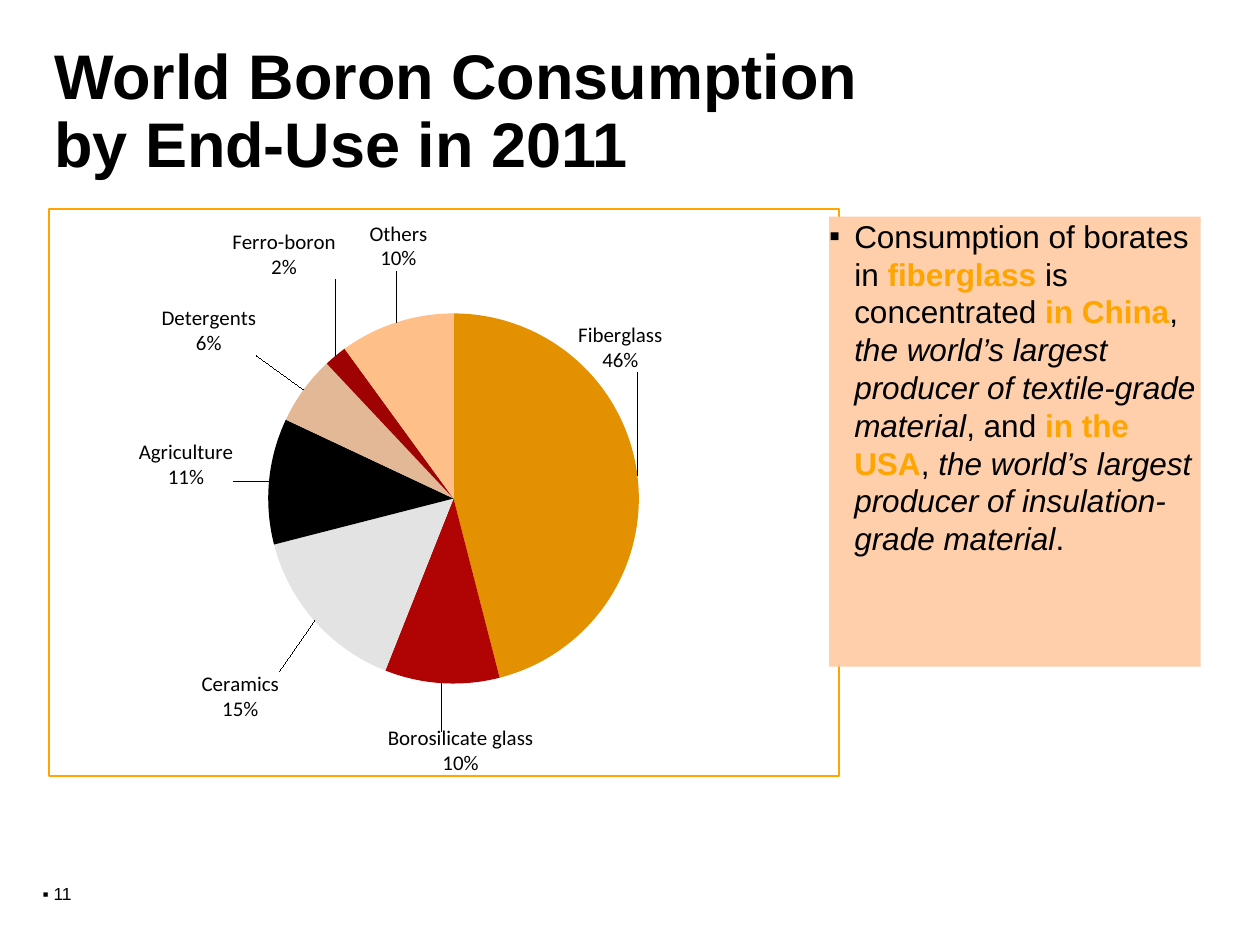
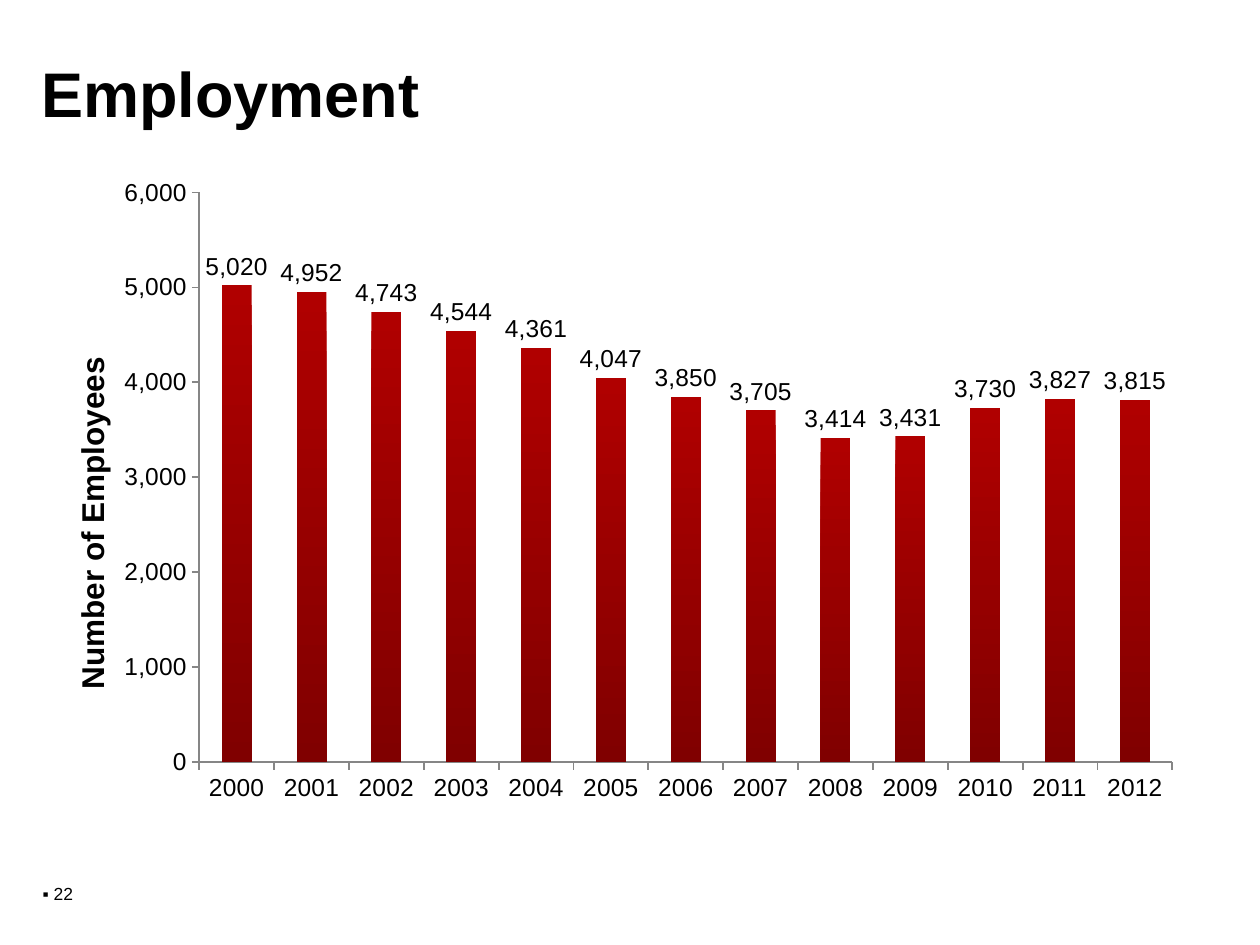
"""Build two slides on boron: consumption by end-use and employment."""
from itertools import accumulate
from math import cos, pi, sin

from pptx import Presentation, util as u
from pptx.chart.data import CategoryChartData
from pptx.dml.color import RGBColor
from pptx.enum import chart as charts, text
from pptx.oxml import parse_xml
from pptx.oxml.ns import nsdecls, qn

BLACK = RGBColor(0, 0, 0)
ORANGE = RGBColor(0xFE, 0xA5, 0x01)
PEACH = RGBColor(0xFE, 0xCF, 0xAA)
AMBER = RGBColor(0xE3, 0x91, 0x00)
RED = RGBColor(0xB0, 0x03, 0x03)
SILVER = RGBColor(0xE3, 0xE3, 0xE3)
TAN = RGBColor(0xE3, 0xB8, 0x96)
DARK_RED = RGBColor(0x9E, 0x02, 0x02)
APRICOT = RGBColor(0xFE, 0xBF, 0x88)
BAR_TOP = RGBColor(0xB0, 0x00, 0x00)
BAR_FOOT = RGBColor(0x80, 0x00, 0x00)
GREY = RGBColor(0x86, 0x86, 0x86)

WIDTH, HEIGHT = 10, 7.5
NUMBER_BOX = (0.24, 6.96, 1.47, 0.27)

CONSUMPTION = {
    "title": "World Boron Consumption\vby End-Use in 2011",
    "title_box": (0.43, 0.31, 9.06, 1.16),
    "number": 11,
    "chart_box": (0.38, 1.65, 6.29, 4.52),
    "plot": (0.168, 0.184, 0.688, 0.653),
    "body_box": (6.58, 1.72, 2.95, 3.57),
}
LABEL_HEIGHT = 0.4
END_USES = [
    ("Fiberglass", 46, AMBER, 0.67, (4.87, 2.76)),
    ("Borosilicate glass", 10, RED, 1.15, (3.66, 5.96)),
    ("Ceramics", 15, SILVER, 0.61, (1.95, 5.5)),
    ("Agriculture", 11, BLACK, 0.75, (1.53, 3.69)),
    ("Detergents", 6, TAN, 0.75, (1.7, 2.65)),
    ("Ferro-boron", 2, DARK_RED, 0.82, (2.29, 2.06)),
    ("Others", 10, APRICOT, 0.46, (3.18, 2)),
]
PLAIN = {"color": BLACK}
KEY = {"color": ORANGE, "bold": True}
ASIDE = {"color": BLACK, "italic": True}
REMARK = [
    ("Consumption of borates in ", PLAIN),
    ("fiberglass ", KEY),
    ("is concentrated ", PLAIN),
    ("in China", KEY),
    (", ", PLAIN),
    ("the world’s largest producer of textile-grade material", ASIDE),
    (", and ", PLAIN),
    ("in the USA", KEY),
    (", ", PLAIN),
    ("the world’s largest producer of insulation-grade material", ASIDE),
    (".", PLAIN),
]

EMPLOYMENT = {
    "title": "Employment",
    "title_box": (0.33, 0.45, 9.32, 0.71),
    "number": 22,
    "chart_box": (0.43, 1.33, 9.14, 5.21),
    "plot": (0.126, 0.038, 0.845, 0.868),
    "axis_title": "Number of Employees",
    "axis_title_at": (0.01, 0.28),
}
FIRST_YEAR = 2000
EMPLOYEES = [5020, 4952, 4743, 4544, 4361, 4047, 3850,
             3705, 3414, 3431, 3730, 3827, 3815]


def apply(target, **values):
    for name, value in values.items():
        setattr(target, name, value)


def style(font, size, color=BLACK, name="Arial", **values):
    apply(font, size=u.Pt(size), name=name, **values)
    font.color.rgb = color


def place(shape, box):
    for name, value in zip(("left", "top", "width", "height"), box):
        setattr(shape, name, u.Inches(value))


def layout_xml(modes, **values):
    parts = "".join(f'<c:{mode} val="{kind}"/>' for mode, kind in modes.items())
    parts += "".join(f'<c:{name} val="{value:.4f}"/>' for name, value in values.items())
    return parse_xml(f'<c:layout {nsdecls("c")}><c:manualLayout>{parts}'
                     '</c:manualLayout></c:layout>')


def start_slide(deck, layout, content):
    slide = deck.slides.add_slide(deck.slide_layouts[layout])
    title = slide.shapes.title
    place(title, content["title_box"])
    frame = title.text_frame
    frame.text = content["title"]
    apply(frame, margin_left=0, margin_right=0, word_wrap=True,
          auto_size=text.MSO_AUTO_SIZE.NONE, vertical_anchor=text.MSO_ANCHOR.TOP)
    heading = frame.paragraphs[0]
    apply(heading, alignment=text.PP_ALIGN.LEFT, line_spacing=0.9)
    for run in heading.runs:
        style(run.font, 36, bold=True)

    number = slide.shapes.add_textbox(*map(u.Inches, NUMBER_BOX)).text_frame
    apply(number, word_wrap=True, vertical_anchor=text.MSO_ANCHOR.MIDDLE)
    run = number.paragraphs[0].add_run()
    run.text = f"▪ {content['number']}"
    style(run.font, 10)
    return slide


def add_chart(slide, content, kind, categories, values, size, font):
    data = CategoryChartData()
    data.categories = categories
    data.add_series("Series 1", values)
    frame = slide.shapes.add_chart(kind, *map(u.Inches, content["chart_box"]), data)
    slide.shapes._spTree.insert(2, frame._element)
    chart = frame.chart
    apply(chart, has_title=False, has_legend=False)
    style(chart.font, size, name=font)
    area = chart._chartSpace.chart.plotArea
    for old in area.findall(qn("c:layout")):
        area.remove(old)
    modes = {"layoutTarget": "inner", "xMode": "edge", "yMode": "edge"}
    area.insert(0, layout_xml(modes, **dict(zip("xywh", content["plot"]))))
    return chart


def label_offset(share, width, target):
    left, top, chart_width, chart_height = CONSUMPTION["chart_box"]
    x, y, w, h = CONSUMPTION["plot"]
    radius = min(w * chart_width, h * chart_height) / 2
    across, up = sin(2 * pi * share), cos(2 * pi * share)
    side = 0 if abs(across) < sin(pi / 36) else (1 if across > 0 else -1)
    rise = 0 if abs(up) < sin(pi / 36) else (1 if up > 0 else -1)
    start_x = left + (x + w / 2) * chart_width + radius * across + side * width / 2
    start_y = top + (y + h / 2) * chart_height - radius * up - rise * LABEL_HEIGHT / 2
    return (target[0] - start_x) / chart_width, (target[1] - start_y) / chart_height


def show_share_and_name(labels):
    for flag, shown in (("showVal", 0), ("showCatName", 1), ("showPercent", 1)):
        labels.find(qn(f"c:{flag}")).set("val", str(shown))
    separator = parse_xml(f'<c:separator {nsdecls("c")}>\n</c:separator>')
    labels.find(qn("c:showBubbleSize")).addnext(separator)


def add_consumption(deck):
    slide = start_slide(deck, 1, CONSUMPTION)
    names, shares, colors, widths, targets = zip(*END_USES)
    chart = add_chart(slide, CONSUMPTION, charts.XL_CHART_TYPE.PIE,
                      names, shares, 12, "Calibri")
    border = parse_xml(
        f'<c:spPr {nsdecls("c", "a")}><a:noFill/><a:ln w="{u.Pt(1.5)}"><a:solidFill>'
        f'<a:srgbClr val="{ORANGE}"/></a:solidFill></a:ln></c:spPr>')
    chart._chartSpace.find(qn("c:txPr")).addprevious(border)

    series = chart.plots[0].series[0]
    style(series.data_labels.font, 12, name="Calibri")
    ends = accumulate(shares)
    for i, (end, share, color, width, target) in enumerate(
            zip(ends, shares, colors, widths, targets)):
        point = series.points[i]
        point.format.fill.solid()
        point.format.fill.fore_color.rgb = color
        point.data_label.position = charts.XL_LABEL_POSITION.OUTSIDE_END
        x, y = label_offset((end - share / 2) / sum(shares), width, target)
        label = series._element.findall(".//" + qn("c:dLbl"))[i]
        label.find(qn("c:idx")).addnext(layout_xml({}, x=x, y=y))
        show_share_and_name(label)
    show_share_and_name(series._element.find(qn("c:dLbls")))

    body = slide.placeholders[1]
    place(body, CONSUMPTION["body_box"])
    body.fill.solid()
    body.fill.fore_color.rgb = PEACH
    frame = body.text_frame
    apply(frame, margin_left=0, margin_right=0, margin_top=0, margin_bottom=0,
          word_wrap=True, auto_size=text.MSO_AUTO_SIZE.NONE,
          vertical_anchor=text.MSO_ANCHOR.TOP)
    remark = frame.paragraphs[0]
    remark.space_before = u.Pt(0)
    props = remark._p.get_or_add_pPr()
    props.set("marL", str(u.Inches(0.2)))
    props.set("indent", str(u.Inches(-0.2)))
    for bullet in ('buFont {} typeface="Arial"', 'buChar {} char="▪"'):
        props.append(parse_xml(f"<a:{bullet.format(nsdecls('a'))}/>"))
    for words, look in REMARK:
        run = remark.add_run()
        run.text = words
        style(run.font, 18, **look)


def add_employment(deck):
    slide = start_slide(deck, 5, EMPLOYMENT)
    years = [str(FIRST_YEAR + i) for i in range(len(EMPLOYEES))]
    chart = add_chart(slide, EMPLOYMENT, charts.XL_CHART_TYPE.COLUMN_CLUSTERED,
                      years, EMPLOYEES, 18, "Arial")
    plot = chart.plots[0]
    apply(plot, gap_width=150, vary_by_categories=False, has_data_labels=True)
    apply(plot.data_labels, show_value=True, number_format="#,##0",
          number_format_is_linked=False,
          position=charts.XL_LABEL_POSITION.OUTSIDE_END)
    style(plot.data_labels.font, 14)

    bars = plot.series[0].format.fill
    bars.gradient()
    bars.gradient_angle = 270
    for stop, color in zip(bars.gradient_stops, (BAR_TOP, BAR_FOOT)):
        stop.color.rgb = color

    for axis in (chart.category_axis, chart.value_axis):
        apply(axis, has_major_gridlines=False,
              major_tick_mark=charts.XL_TICK_MARK.OUTSIDE,
              minor_tick_mark=charts.XL_TICK_MARK.NONE)
        axis.format.line.color.rgb = GREY
        axis.format.line.width = u.Pt(1)
        style(axis.tick_labels.font, 14)
    staff = chart.value_axis
    apply(staff, minimum_scale=0, maximum_scale=6000, major_unit=1000)
    apply(staff.tick_labels, number_format="#,##0", number_format_is_linked=False)
    caption = staff.axis_title
    caption.text_frame.text = EMPLOYMENT["axis_title"]
    style(caption.text_frame.paragraphs[0].runs[0].font, 18, bold=True)
    caption.text_frame._txBody.find(qn("a:bodyPr")).set("rot", "-5400000")
    holder = caption._element
    for old in holder.findall(qn("c:layout")):
        holder.remove(old)
    place_at = dict(zip("xy", EMPLOYMENT["axis_title_at"]))
    holder.find(qn("c:tx")).addnext(
        layout_xml({"xMode": "edge", "yMode": "edge"}, **place_at))


def main():
    deck = Presentation()
    apply(deck, slide_width=u.Inches(WIDTH), slide_height=u.Inches(HEIGHT))
    add_consumption(deck)
    add_employment(deck)
    deck.save("out.pptx")


if __name__ == "__main__":
    main()
